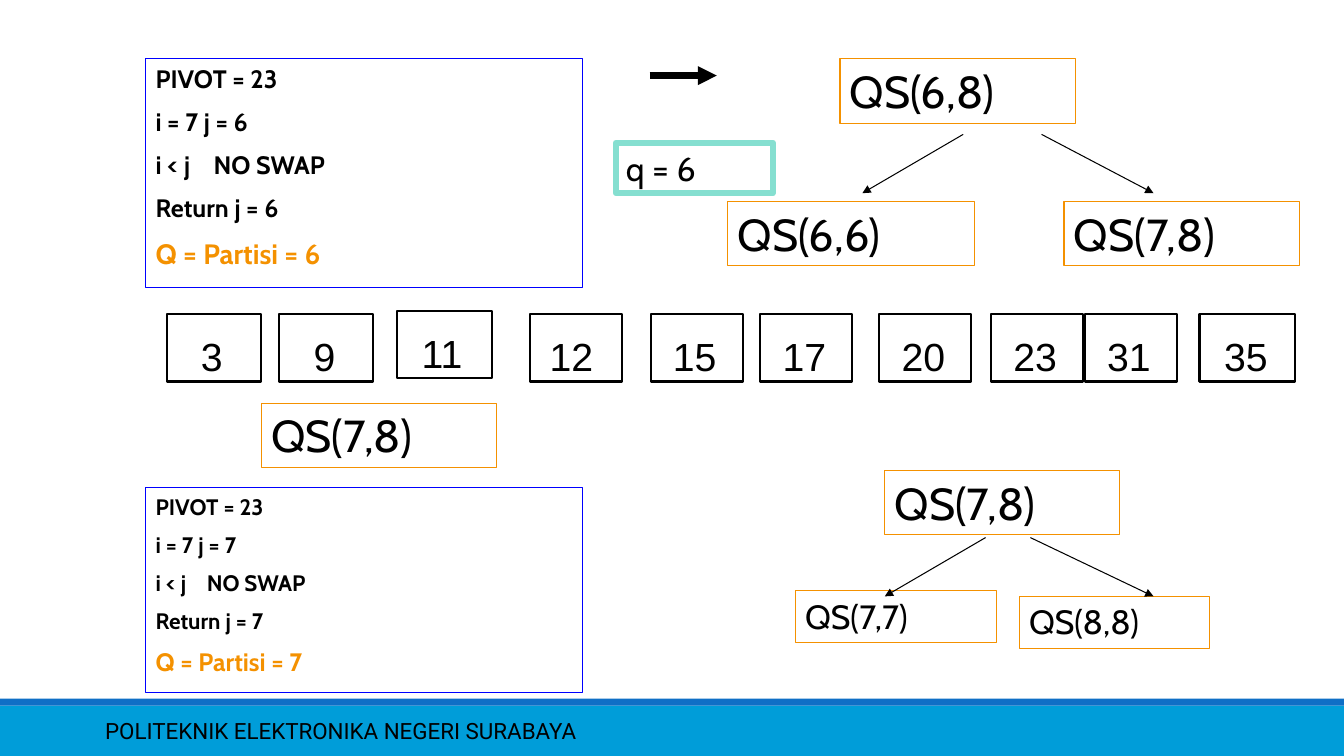
from lxml import etree
from pptx import Presentation
from pptx.dml.color import RGBColor
from pptx.enum.shapes import MSO_CONNECTOR, MSO_SHAPE
from pptx.enum.text import MSO_ANCHOR, PP_ALIGN
from pptx.oxml.ns import qn
from pptx.util import Pt

RECTANGLE = MSO_SHAPE.RECTANGLE
STRAIGHT = MSO_CONNECTOR.STRAIGHT
TOP, MIDDLE = MSO_ANCHOR.TOP, MSO_ANCHOR.MIDDLE
LEFT, CENTER = PP_ALIGN.LEFT, PP_ALIGN.CENTER

BLACK, ORANGE, BLUE, MINT = "000000", "F49100", "0000FF", "85DFD0"
FOOTER_BLUE, FOOTER_EDGE = "009DD9", "0F6FC6"


def color(value):
    return RGBColor.from_string(value)


class SlideBuilder:
    """Draws the elements of one slide in a shared style."""

    font = "Cabin"

    def __init__(self, slide):
        self.slide = slide

    def box(self, left, top, width, height, fill=None, line=None, weight=0.75):
        shape = self.slide.shapes.add_shape(
            RECTANGLE, Pt(left), Pt(top), Pt(width), Pt(height))
        shape.shadow.inherit = False
        if fill:
            shape.fill.solid()
            shape.fill.fore_color.rgb = color(fill)
        else:
            shape.fill.background()
        if line:
            shape.line.color.rgb = color(line)
            shape.line.width = Pt(weight)
        else:
            shape.line.fill.background()
        return shape

    def set_text(self, shape, lines, align=LEFT, anchor=TOP, wrap=True, tab=None):
        """Fill a shape with paragraphs given as (text, font formats) pairs."""
        frame = shape.text_frame
        frame.word_wrap = wrap
        frame.vertical_anchor = anchor
        for index, (text, formats) in enumerate(lines):
            paragraph = frame.add_paragraph() if index else frame.paragraphs[0]
            paragraph.alignment = align
            if index:
                paragraph.space_before = Pt(formats["size"].pt / 2)
            if "\t" in text:
                self.tab_stop(paragraph, tab)
            run = paragraph.add_run()
            run.text = text
            values = {"name": self.font, **formats}
            run.font.color.rgb = color(values.pop("color", BLACK))
            for name, value in values.items():
                setattr(run.font, name, value)

    def tab_stop(self, paragraph, position):
        properties = paragraph._p.get_or_add_pPr()
        tabs = etree.SubElement(properties, qn("a:tabLst"))
        etree.SubElement(tabs, qn("a:tab"), pos=str(Pt(position)), algn="l")

    def text(self, left, top, width, height, text, formats, **layout):
        shape = self.slide.shapes.add_textbox(
            Pt(left), Pt(top), Pt(width), Pt(height))
        self.set_text(shape, [(text, formats)], **layout)

    def label(self, left, top, width, height, text, size, line=ORANGE, weight=0.75):
        shape = self.box(left, top, width, height, line=line, weight=weight)
        self.set_text(shape, [(text, {"size": Pt(size)})])

    def trace(self, top, height, lines, size, tab):
        """Bordered list of steps whose last line is the highlighted result."""
        *steps, result = lines
        step = {"size": Pt(size), "bold": True}
        final = {"size": Pt(size + 2), "bold": True, "color": ORANGE}
        shape = self.box(104, top, 312, height, line=BLUE)
        self.set_text(shape, [(text, step) for text in steps] + [(result, final)], tab=tab)

    def cell(self, number, left, width, center, top=224.5):
        self.box(left, top, width, 48, line=BLACK, weight=1.5)
        text_width = 14.4 + 15.6 * len(number)
        self.text(center - text_width / 2, top + 9.5, text_width, 41, number,
                  {"name": "Arial", "size": Pt(28)}, align=CENTER, wrap=False)

    def arrow(self, start_x, start_y, end_x, end_y, weight=0.75):
        connector = self.slide.shapes.add_connector(
            STRAIGHT, Pt(start_x), Pt(start_y), Pt(end_x), Pt(end_y))
        connector.line.color.rgb = color(BLACK)
        connector.line.width = Pt(weight)
        etree.SubElement(connector.line._get_or_add_ln(), qn("a:tailEnd"), type="triangle")
        etree.SubElement(connector._element.spPr, qn("a:effectLst"))


CALLS = [
    (600, 42, 168, 46, "QS(6,8)", 32),
    (760, 144, 168, 46, "QS(7,8)", 32),
    (520, 144, 176, 46, "QS(6,6)", 32),
    (186.5, 288, 168, 46, "QS(7,8)", 32),
    (632, 336, 168, 46, "QS(7,8)", 32),
    (728, 426, 136, 37, "QS(8,8)", 24),
    (568, 422, 144, 37, "QS(7,7)", 24),
    (440, 102, 112, 36, "q = 6", 24, MINT, 4.5),
]
ARROWS = [
    (688, 96, 616, 138),
    (744, 96, 824, 138),
    (704, 384, 632, 426),
    (736, 384, 824, 426),
    (464, 54, 512, 54, 4.5),
]
TRACES = [
    (42, 163.5, ["PIVOT = 23", "i = 7 j = 6", "i < j\tNO SWAP",
                 "Return j = 6", "Q = Partisi = 6"], 18, 41.4),
    (348.5, 146.5, ["PIVOT = 23", "i = 7 j = 7", "i < j\tNO SWAP",
                    "Return j = 7", "Q = Partisi = 7"], 16, 36.6),
]
# number, left and width of the cell, centre of the number, top if shifted
CELLS = [
    ("3", 119.2, 67.5, 151.2),
    ("9", 199.2, 67.5, 231.8),
    ("11", 283.7, 67.5, 315.7, 222),
    ("12", 378.6, 65.8, 408.2),
    ("15", 464.8, 65.8, 496.1),
    ("17", 542.9, 65.8, 574.6),
    ("20", 627.8, 65.8, 659.5),
    ("23", 707.8, 65.8, 739.4),
    ("31", 775.1, 65.8, 806.4),
    ("35", 856.8, 68.4, 889.9),
]


def main():
    presentation = Presentation()
    presentation.slide_width, presentation.slide_height = Pt(960), Pt(540)
    builder = SlideBuilder(presentation.slides.add_slide(presentation.slide_layouts[6]))

    builder.box(0, 504, 960, 36, fill=FOOTER_BLUE)
    builder.box(0, 499, 960, 5, fill=FOOTER_EDGE)
    builder.text(68, 507.6, 605, 29, "POLITEKNIK ELEKTRONIKA NEGERI SURABAYA",
                 {"name": "Roboto", "size": Pt(16)}, anchor=MIDDLE)
    for draw, items in ((builder.label, CALLS), (builder.trace, TRACES),
                        (builder.cell, CELLS), (builder.arrow, ARROWS)):
        for item in items:
            draw(*item)

    presentation.save("out.pptx")


if __name__ == "__main__":
    main()
